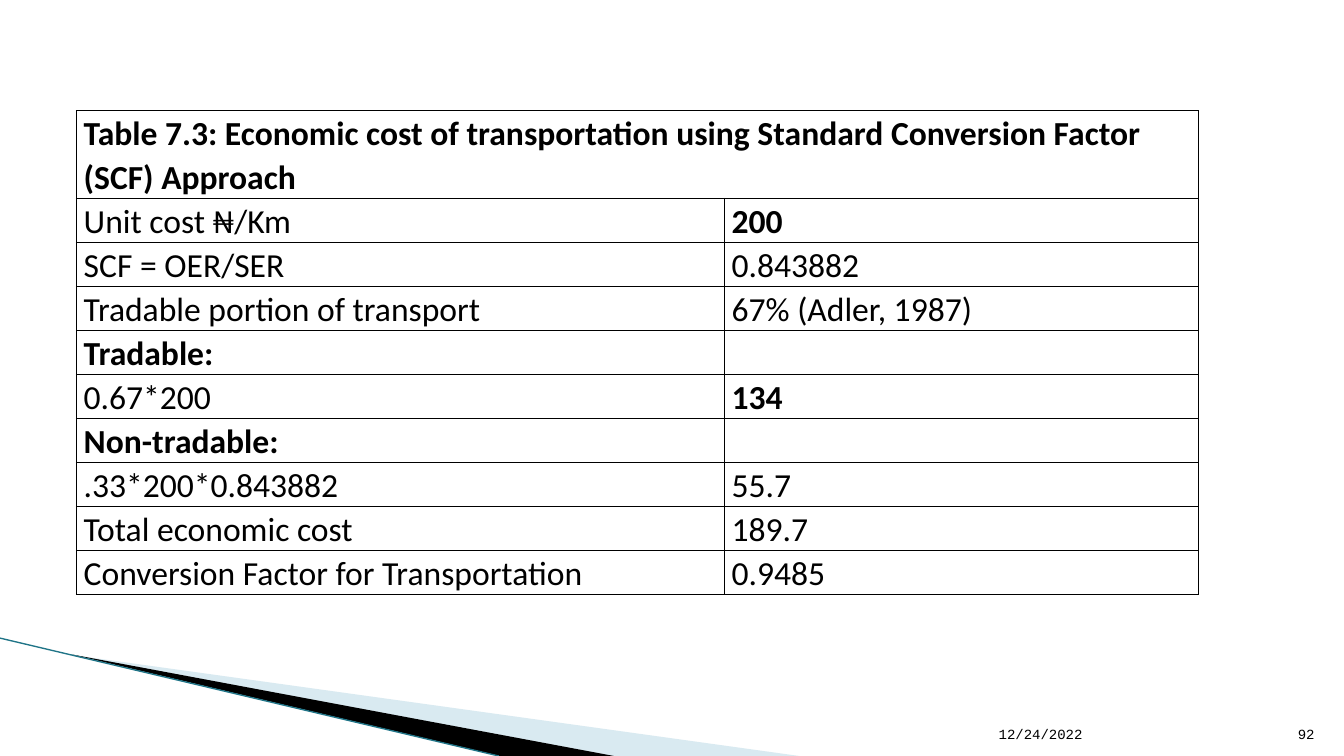
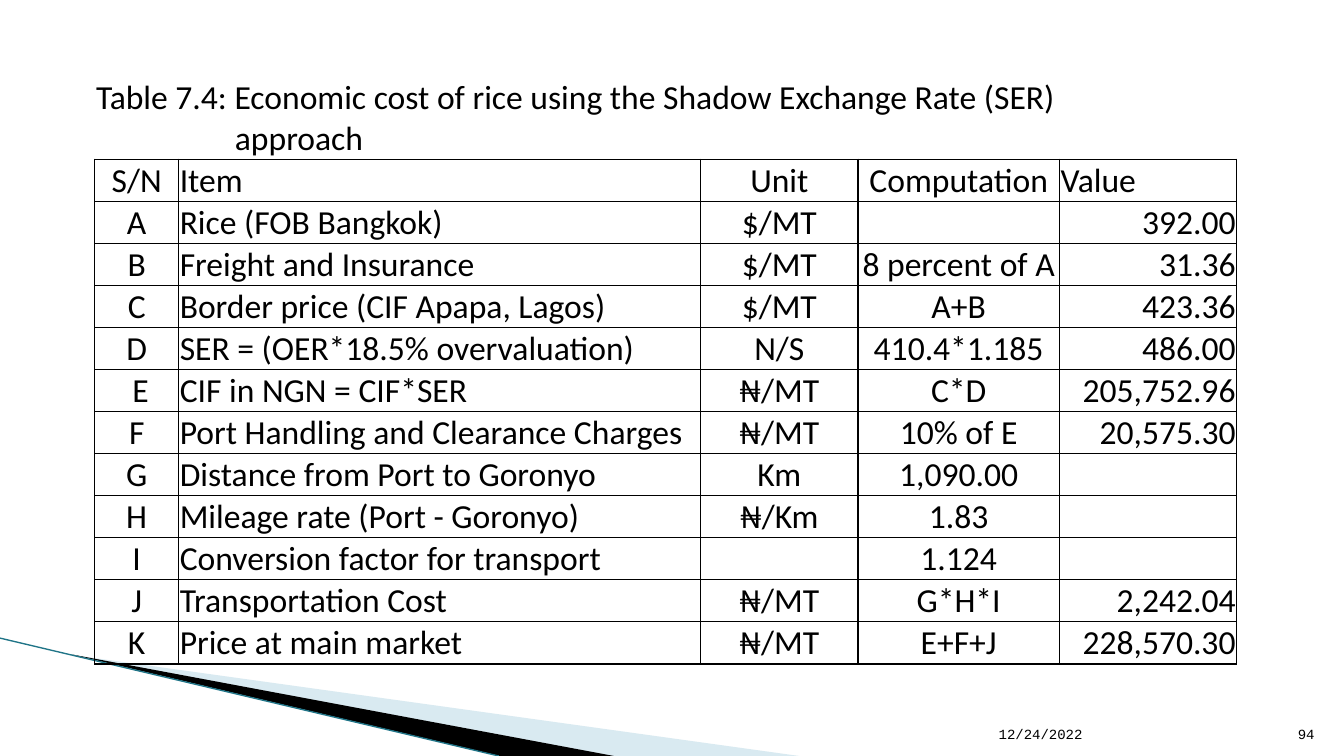
from lxml.etree import SubElement
from pptx import Presentation
from pptx.dml.color import RGBColor
from pptx.enum.shapes import MSO_CONNECTOR
from pptx.enum.text import MSO_ANCHOR, PP_ALIGN
from pptx.oxml import parse_xml
from pptx.oxml.ns import nsdecls, qn
from pptx.util import Cm, Pt

BLACK = RGBColor(0x00, 0x00, 0x00)
PALE_BLUE = RGBColor(0xA0, 0xCB, 0xDC)
TEAL = RGBColor(0x1F, 0x74, 0x87)
LEFT, CENTER, RIGHT = PP_ALIGN.LEFT, PP_ALIGN.CENTER, PP_ALIGN.RIGHT
TOP, BOTTOM = MSO_ANCHOR.TOP, MSO_ANCHOR.BOTTOM

TRANSPORT_ROWS = [
    ("Table 7.3: Economic cost of transportation using Standard Conversion Factor (SCF) Approach", ""),
    ("Unit cost ₦/Km", "200"),
    ("SCF = OER/SER", "0.843882"),
    ("Tradable portion of transport", "67% (Adler, 1987)"),
    ("Tradable:", ""),
    ("0.67*200", "134"),
    ("Non-tradable:", ""),
    (".33*200*0.843882", "55.7"),
    ("Total economic cost", "189.7"),
    ("Conversion Factor for Transportation", "0.9485"),
]
TRANSPORT_BOLD = {TRANSPORT_ROWS[0][0], "200", "Tradable:", "134", "Non-tradable:"}

RICE_ROWS = [
    ("Table 7.4: Economic cost of rice using the Shadow Exchange Rate (SER) approach", "", "", "", ""),
    ("S/N", "Item", "Unit", "Computation", "Value"),
    ("A", "Rice (FOB Bangkok)", "$/MT", "", "392.00"),
    ("B", "Freight and Insurance", "$/MT", "8 percent of A", "31.36"),
    ("C", "Border price (CIF Apapa, Lagos)", "$/MT", "A+B", "423.36"),
    ("D", "SER = (OER*18.5% overvaluation)", "N/S", "410.4*1.185", "486.00"),
    (" E", "CIF in NGN = CIF*SER", "₦/MT", "C*D", "205,752.96"),
    ("F", "Port Handling and Clearance Charges", "₦/MT", "10% of E", "20,575.30"),
    ("G", "Distance from Port to Goronyo", "Km", "1,090.00", ""),
    ("H", "Mileage rate (Port - Goronyo)", "₦/Km", "1.83", ""),
    ("I", "Conversion factor for transport", "", "1.124", ""),
    ("J", "Transportation Cost", "₦/MT", "G*H*I", "2,242.04"),
    ("K", "Price at main market", "₦/MT", "E+F+J", "228,570.30"),
]
RICE_ALIGNS = [[LEFT] * 5, [CENTER, LEFT, CENTER, CENTER, LEFT]]
RICE_ALIGNS += [[CENTER, LEFT, CENTER, CENTER, RIGHT]] * (len(RICE_ROWS) - 2)


def write(frame, text, font="Calibri", size=24, bold=False, align=LEFT, spacing=1.0, hanging=0):
    """Put one formatted line of text into a text frame."""
    paragraph = frame.paragraphs[0]
    paragraph.alignment = align
    paragraph.line_spacing = spacing
    if hanging:
        properties = paragraph._p.get_or_add_pPr()
        properties.set("marL", str(Cm(hanging)))
        properties.set("indent", str(-Cm(hanging)))
    run = paragraph.add_run()
    run.text = text
    run.font.name = font
    run.font.size = Pt(size)
    run.font.bold = bold
    run.font.color.rgb = BLACK


def set_borders(cell, ruled="LRTB"):
    """Rule the named sides of a cell and clear the others."""
    properties = cell._tc.get_or_add_tcPr()
    for index, side in enumerate("LRTB"):
        fill = f'<a:solidFill><a:srgbClr val="{BLACK}"/></a:solidFill>' if side in ruled else "<a:noFill/>"
        properties.insert(index, parse_xml(f'<a:ln{side} {nsdecls("a")} w="{Pt(1)}">{fill}</a:ln{side}>'))


class Deck:
    """Hold the presentation style and the current slide."""

    def __init__(self):
        """Start a wide presentation."""
        self.presentation = Presentation()
        self.presentation.slide_width = Cm(33.87)
        self.presentation.slide_height = Cm(19.05)
        self.slide = None

    def add_slide(self, number):
        """Add a slide with the shared wedge and footer."""
        self.slide = self.presentation.slides.add_slide(self.presentation.slide_layouts[6])
        self.wedge([(1.85, 16.51), (20.14, 19.05), (15.44, 19.05)], PALE_BLUE, opacity=40)
        self.wedge([(1.8, 16.49), (15.47, 19.05), (12.6, 19.05)], BLACK)
        self.rule((0, 16.08), (12.57, 19.05))
        self.footer("12/24/2022", 24.92, 7.11)
        self.footer(number, 32.03, 1.35, RIGHT)

    def wedge(self, points, color, opacity=100):
        """Draw a filled triangle."""
        start, *others = [(Cm(x), Cm(y)) for x, y in points]
        builder = self.slide.shapes.build_freeform(*start)
        builder.add_line_segments(others)
        triangle = builder.convert_to_shape()
        triangle.shadow.inherit = False
        triangle.fill.solid()
        triangle.fill.fore_color.rgb = color
        triangle.line.fill.background()
        if opacity < 100:
            tint = triangle._element.spPr.find(f'{qn("a:solidFill")}/{qn("a:srgbClr")}')
            SubElement(tint, qn("a:alpha")).set("val", str(opacity * 1000))

    def rule(self, start, end):
        """Draw the thin line along the wedge."""
        ends = [Cm(value) for value in (*start, *end)]
        line = self.slide.shapes.add_connector(MSO_CONNECTOR.STRAIGHT, *ends)
        line.line.color.rgb = TEAL
        line.line.width = Pt(0.95)
        SubElement(line._element.spPr, qn("a:effectLst"))

    def footer(self, text, left, width, align=LEFT):
        """Write one footer entry."""
        frame = self.slide.shapes.add_textbox(Cm(left), Cm(17.81), Cm(width), Cm(1.02)).text_frame
        frame.word_wrap = True
        frame.vertical_anchor = BOTTOM
        write(frame, text, font="Courier New", size=10, align=align)

    def table(self, rows, left, top, widths, heading_height, row_height, heading_span, aligns=None,
              bold=(), anchor=TOP, inset=0.18, spacing=1.0, hanging=0, heading_ruled="LRTB"):
        """Add a ruled table whose first row is a merged heading."""
        heights = [heading_height] + [row_height] * (len(rows) - 1)
        grid = self.slide.shapes.add_table(len(rows), len(widths), Cm(left), Cm(top),
                                           Cm(sum(widths)), Cm(sum(heights))).table
        grid.first_row = grid.horz_banding = False
        for column, width in zip(grid.columns, widths):
            column.width = Cm(width)
        for row, height in zip(grid.rows, heights):
            row.height = Cm(height)
        for r, texts in enumerate(rows):
            for c, text in enumerate(texts):
                cell = grid.cell(r, c)
                cell.fill.background()
                set_borders(cell, "LRTB" if r else heading_ruled)
                cell.vertical_anchor = anchor
                cell.margin_left = cell.margin_right = Cm(inset)
                cell.margin_top = cell.margin_bottom = 0
                if text:
                    write(cell.text_frame, text, bold=text in bold, spacing=spacing,
                          align=aligns[r][c] if aligns else LEFT, hanging=0 if r else hanging)
        grid.cell(0, 0).merge(grid.cell(0, heading_span - 1))


def main():
    """Build and save the two table slides."""
    deck = Deck()
    deck.add_slide("92")
    deck.table(TRANSPORT_ROWS, 1.93, 2.79, [16.33, 11.94], 2.21, 1.11, heading_span=2,
               bold=TRANSPORT_BOLD, spacing=1.07)
    deck.add_slide("94")
    deck.table(RICE_ROWS, 2.39, 1.93, [2.11, 13.16, 3.96, 5.08, 4.47], 2.08, 1.06, heading_span=4,
               aligns=RICE_ALIGNS, anchor=BOTTOM, inset=0.03, hanging=3.5, heading_ruled="B")
    deck.presentation.save("out.pptx")


if __name__ == "__main__":
    main()
